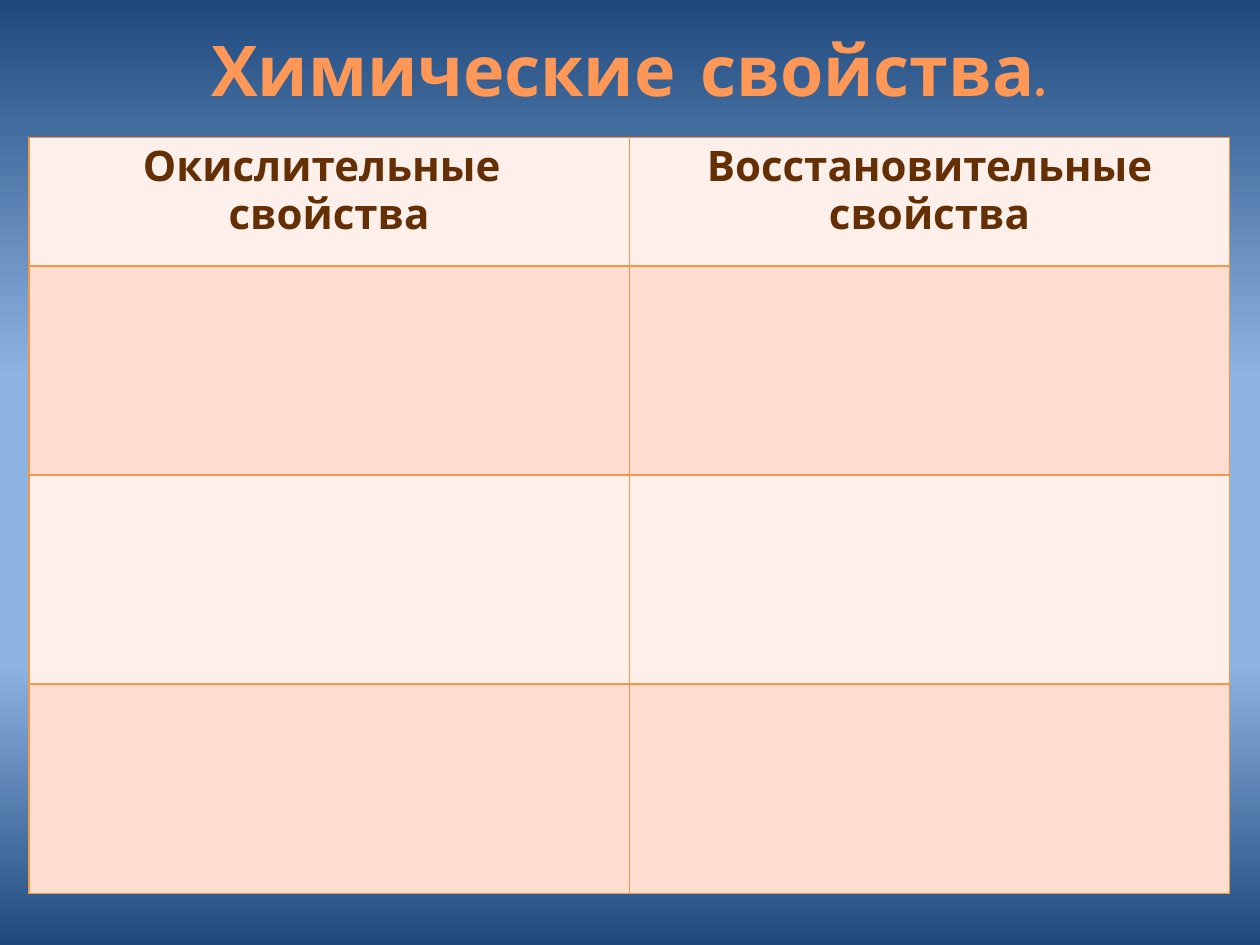
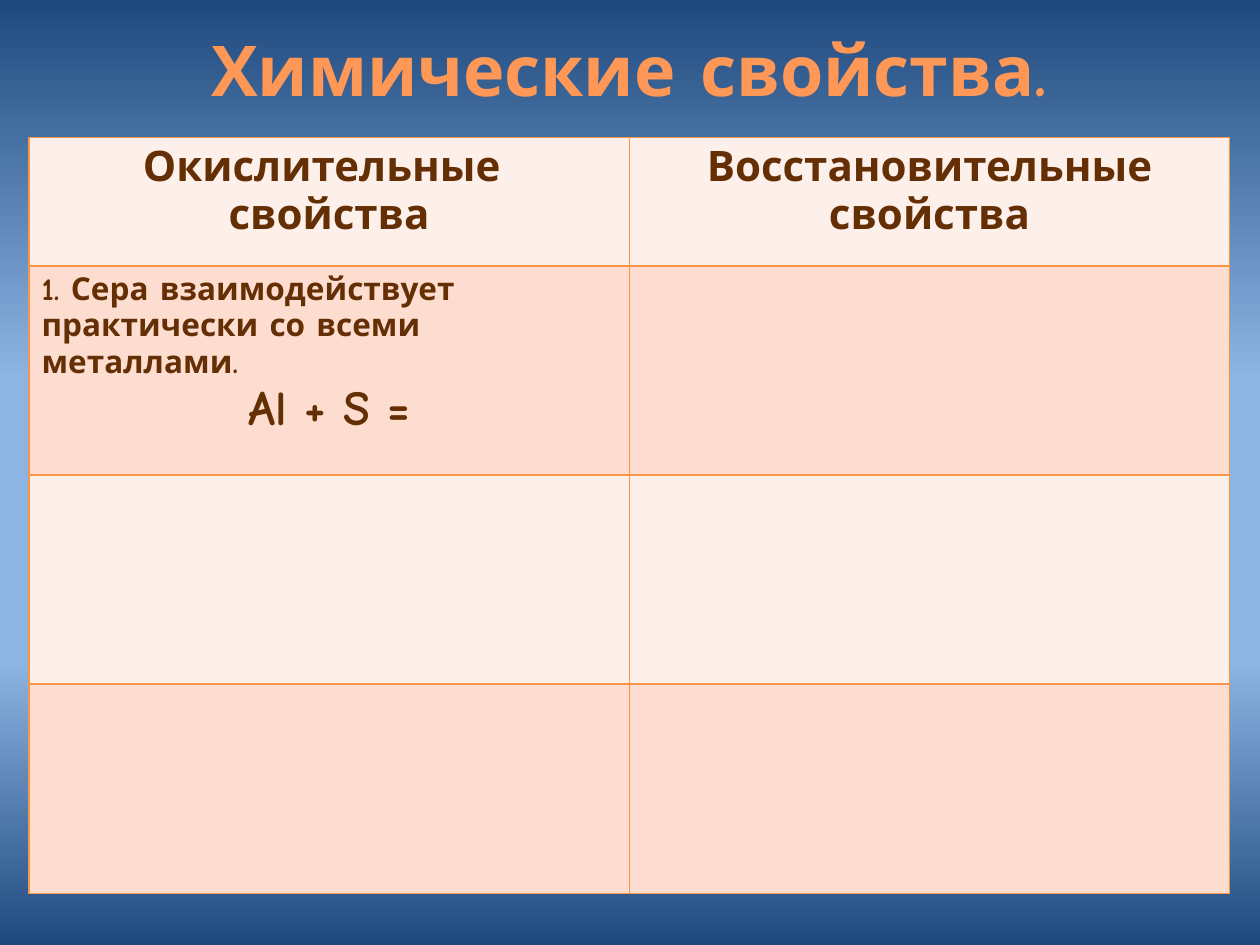
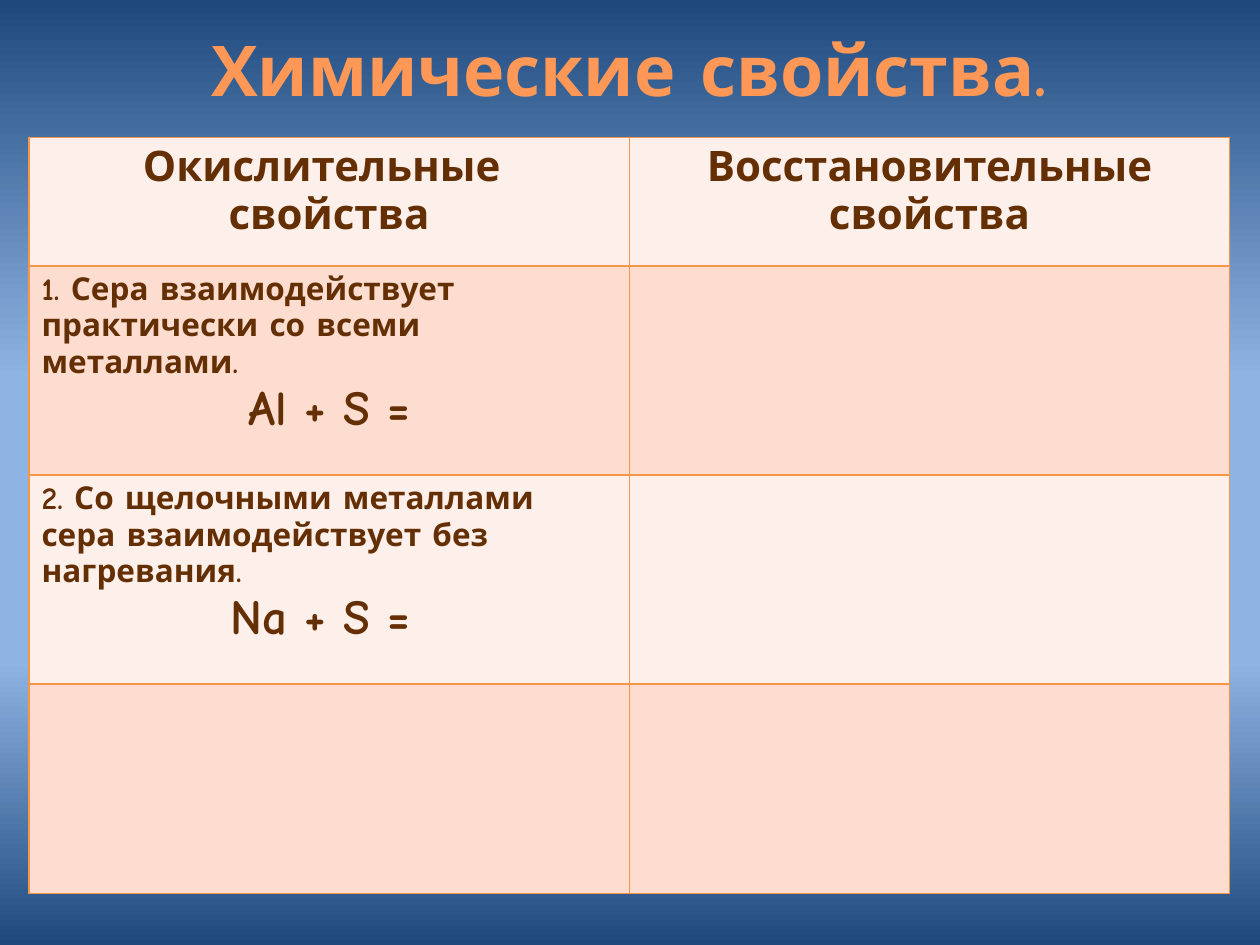
from dataclasses import dataclass

from lxml import etree
from pptx import Presentation
from pptx.dml.color import RGBColor
from pptx.enum.text import MSO_AUTO_SIZE, PP_ALIGN
from pptx.oxml.ns import qn
from pptx.util import Inches, Pt

CENTER = PP_ALIGN.CENTER
LEFT = PP_ALIGN.LEFT
GROW = MSO_AUTO_SIZE.SHAPE_TO_FIT_TEXT
BLANK_LAYOUT = 6


@dataclass(frozen=True)
class Theme:
    font: str = "Comic Neue"
    text: str = "642F04"
    border: str = "F79646"
    bands: tuple = ("FDEFE9", "FCDDCF")
    backdrop: tuple = ((0, "1F497D"), (40, "8EB4E3"), (70, "8EB4E3"), (100, "1F497D"))
    title_fill: tuple = ((0, "9D4700"), (78, "FF9856"), (100, "FFF5F1"))
    title_size: int = 40
    header_size: int = 24
    note_size: int = 18
    equation_size: int = 28
    border_width: int = 1


THEME = Theme()
MARGIN = 0.23
CONTENT_WIDTH = 9.53
TITLE = "Химические свойства."
HEADERS = (("Окислительные ", "свойства"), ("Восстановительные свойства",))
REACTIONS = (
    ("1. Сера взаимодействует практически со всеми металлами.", "Al + S ="),
    ("2. Со щелочными металлами сера взаимодействует без нагревания.", "Na + S = "),
)
ROW_HEIGHTS = (1.02, 1.66, 1.66, 1.66)


def add_color(parent, color):
    etree.SubElement(parent, qn("a:srgbClr"), val=color)


def apply_gradient(fill, owner, stops):
    fill.gradient()
    fill.gradient_angle = 270
    stop_list = next(owner.iter(qn("a:gsLst")))
    for stop in list(stop_list):
        stop_list.remove(stop)
    for percent, color in stops:
        add_color(etree.SubElement(stop_list, qn("a:gs"), pos=str(percent * 1000)), color)


def style_font(font, size):
    font.name = THEME.font
    font.size = Pt(size)
    font.bold = True


def add_title(page):
    box = page.shapes.add_textbox(
        Inches(MARGIN), Inches(0.16), Inches(CONTENT_WIDTH), Inches(0.77))
    frame = box.text_frame
    frame.word_wrap = True
    frame.auto_size = GROW
    para = frame.paragraphs[0]
    para.alignment = CENTER
    span = para.add_run()
    span.text = TITLE
    style_font(span.font, THEME.title_size)
    apply_gradient(span.font.fill, box.element, THEME.title_fill)


def style_cell(cell, color):
    properties = cell._tc.get_or_add_tcPr()
    for side in ("lnL", "lnR", "lnT", "lnB"):
        line = etree.SubElement(properties, qn(f"a:{side}"), w=str(Pt(THEME.border_width)))
        add_color(etree.SubElement(line, qn("a:solidFill")), THEME.border)
    cell.fill.solid()
    cell.fill.fore_color.rgb = RGBColor.from_string(color)


def write_cell(cell, lines):
    frame = cell.text_frame
    for index, (text, size, alignment) in enumerate(lines):
        para = frame.add_paragraph() if index else frame.paragraphs[0]
        para.text = text
        para.alignment = alignment
        style_font(para.font, size)
        para.font.color.rgb = RGBColor.from_string(THEME.text)


def add_properties_table(page, reactions):
    table = page.shapes.add_table(
        len(ROW_HEIGHTS), len(HEADERS), Inches(MARGIN), Inches(1.09),
        Inches(CONTENT_WIDTH), Inches(sum(ROW_HEIGHTS))).table
    table.first_row = False
    table.horz_banding = False
    for index, height in enumerate(ROW_HEIGHTS):
        table.rows[index].height = Inches(height)
        for cell in table.rows[index].cells:
            style_cell(cell, THEME.bands[index % 2])
    for column, header in enumerate(HEADERS):
        write_cell(table.cell(0, column),
                   [(text, THEME.header_size, CENTER) for text in header])
    for row, (note, equation) in enumerate(reactions, start=1):
        write_cell(table.cell(row, 0), [
            (note, THEME.note_size, LEFT),
            (equation, THEME.equation_size, CENTER),
        ])


def add_page(deck, reactions):
    page = deck.slides.add_slide(deck.slide_layouts[BLANK_LAYOUT])
    apply_gradient(page.background.fill, page.element, THEME.backdrop)
    add_title(page)
    add_properties_table(page, reactions)


def main():
    deck = Presentation()
    deck.slide_width = Inches(10)
    deck.slide_height = Inches(7.5)
    for shown in range(len(REACTIONS) + 1):
        add_page(deck, REACTIONS[:shown])
    deck.save("out.pptx")


if __name__ == "__main__":
    main()
